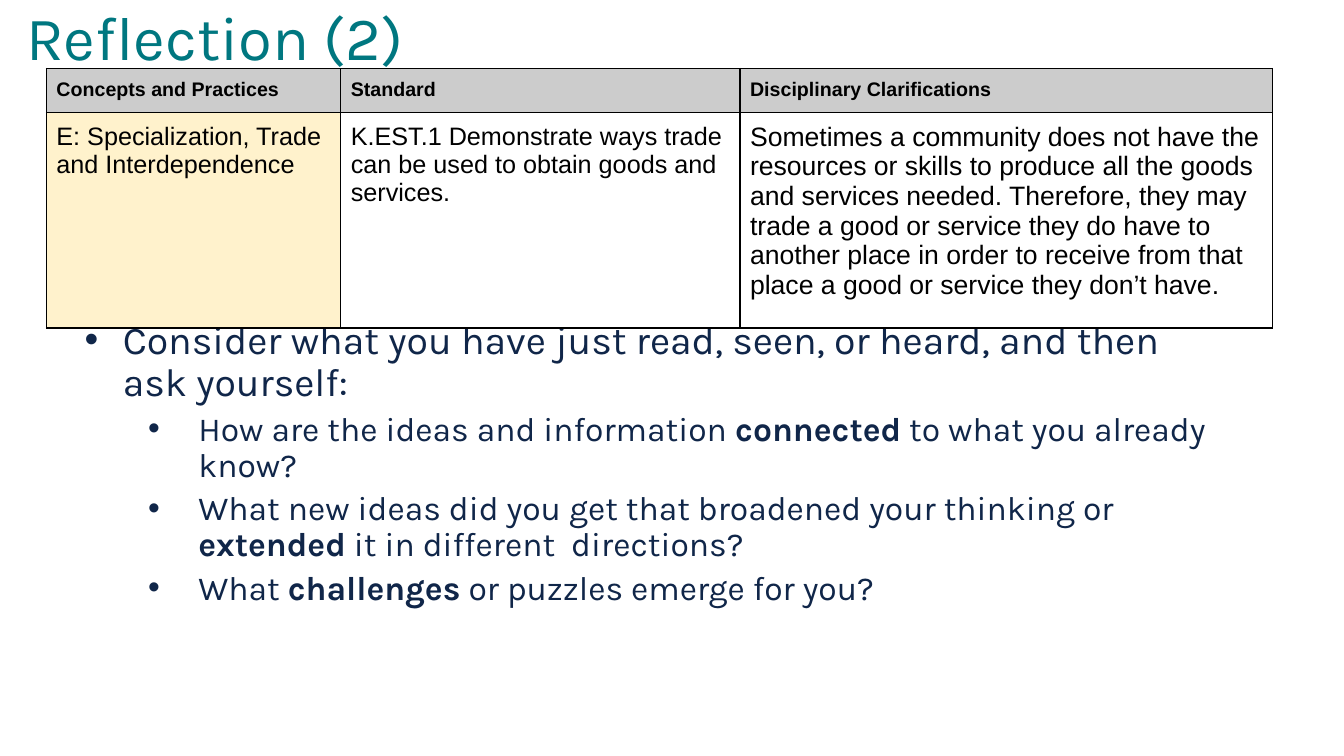
"""Build the Reflection slide: a title, a standards table and a list of prompts."""
from dataclasses import dataclass
from typing import Any

from lxml.etree import SubElement
from pptx import Presentation
from pptx.dml.color import RGBColor
from pptx.enum.text import MSO_ANCHOR
from pptx.oxml.ns import qn
from pptx.slide import Slide
from pptx.util import Inches, Pt

UNIT = 0.1
COLS, ROWS = 133.3, 75


@dataclass(frozen=True)
class Theme:
    teal: str = "007780"
    navy: str = "102649"
    black: str = "000000"
    grey: str = "CCCCCC"
    cream: str = "FFF2CC"
    white: str = "FFFFFF"
    sans: str = "Karla"
    plain: str = "Arial"
    title: float = 44
    lead: float = 28
    point: float = 24
    head: float = 14
    body: float = 18
    note: float = 19
    rule: float = 1


@dataclass(frozen=True)
class Area:
    col: float
    row: float
    wide: float
    high: float


@dataclass(frozen=True)
class Style:
    face: str
    size: float
    tint: str


@dataclass(frozen=True)
class Para:
    texts: tuple[str, ...]
    style: Style
    level: int = 0
    left: float = 0
    hang: float = 0
    above: float = 0


@dataclass(frozen=True)
class Entry:
    text: str
    size: float
    fill: str
    bold: bool = False


THEME = Theme()
LEAD = Style(THEME.sans, THEME.lead, THEME.navy)
POINT = Style(THEME.sans, THEME.point, THEME.navy)
TITLE = Para(("Reflection (2)",), Style(THEME.sans, THEME.title, THEME.teal))
POINTS = (
    ("How are the ideas and information ", "connected", " to what you already know?"),
    ("What new ideas did you get that broadened your thinking or ", "extended",
     " it in different  directions?"),
    ("What ", "challenges", " or puzzles emerge for you?"),
)
PROMPTS = (
    Para(("Consider what you have just read, seen, or heard, and then ask yourself:",),
         LEAD, left=5, hang=3.8),
    *(Para(texts, POINT, 1, 12.5, 5, 5) for texts in POINTS),
)
HEADS = ("Concepts and Practices", "Standard", "Disciplinary Clarifications")
GRID = (
    tuple(Entry(text, THEME.head, THEME.grey, True) for text in HEADS),
    (
        Entry("E: Specialization, Trade and Interdependence", THEME.body, THEME.cream),
        Entry("K.EST.1 Demonstrate ways trade can be used to obtain goods and services.",
              THEME.body, THEME.white),
        Entry("Sometimes a community does not have the resources or skills to produce "
              "all the goods and services needed. Therefore, they may trade a good or "
              "service they do have to another place in order to receive from that "
              "place a good or service they don’t have.", THEME.note, THEME.white),
    ),
)
WIDTHS = (29.2, 39.6, 52.8)
HEIGHTS = (4.2, 21.4)


def span(count: float) -> int:
    """Turn a count of grid units into a length."""
    return Inches(count * UNIT)


def place(area: Area) -> tuple[int, int, int, int]:
    """Turn a grid area into left, top, width and height."""
    return span(area.col), span(area.row), span(area.wide), span(area.high)


def apply(target: Any, form: dict[str, Any]) -> None:
    """Set each format value on the target."""
    for name, value in form.items():
        setattr(target, name, value)


def write(line: Any, text: str, style: Style, bold: bool) -> None:
    """Add one styled run to a paragraph."""
    run = line.add_run()
    run.text = text
    apply(run.font, {"name": style.face, "size": Pt(style.size), "bold": bold})
    run.font.color.rgb = RGBColor.from_string(style.tint)


def bullet(line: Any, para: Para) -> None:
    """Give a paragraph a hanging bullet."""
    props = line._p.get_or_add_pPr()
    props.set("marL", str(span(para.left)))
    props.set("indent", str(-span(para.hang)))
    tint = SubElement(props, qn("a:buClr"))
    SubElement(tint, qn("a:srgbClr"), val=para.style.tint)
    SubElement(props, qn("a:buFont"), typeface=THEME.plain)
    SubElement(props, qn("a:buChar"), char="•")


def draw_text(slide: Slide, area: Area, paras: tuple[Para, ...], anchor: MSO_ANCHOR) -> None:
    """Draw a text box in which every second run is bold."""
    frame = slide.shapes.add_textbox(*place(area)).text_frame
    apply(frame, {"word_wrap": True, "vertical_anchor": anchor})
    for index, para in enumerate(paras):
        line = frame.add_paragraph() if index else frame.paragraphs[0]
        if para.hang:
            bullet(line, para)
        apply(line, {"level": para.level, "line_spacing": 0.9,
                     "space_before": Pt(para.above)})
        for order, text in enumerate(para.texts):
            write(line, text, para.style, order % 2 == 1)


def border(cell: Any) -> None:
    """Rule all four sides of a cell."""
    props = cell._tc.get_or_add_tcPr()
    for side in ("lnL", "lnR", "lnT", "lnB"):
        edge = SubElement(props, qn(f"a:{side}"), w=str(Pt(THEME.rule)))
        fill = SubElement(edge, qn("a:solidFill"))
        SubElement(fill, qn("a:srgbClr"), val=THEME.black)


def draw_table(slide: Slide, area: Area) -> None:
    """Draw the table of standards."""
    table = slide.shapes.add_table(len(HEIGHTS), len(WIDTHS), *place(area)).table
    for column, width in zip(table.columns, WIDTHS):
        column.width = span(width)
    for row, height, items in zip(table.rows, HEIGHTS, GRID):
        row.height = span(height)
        for cell, item in zip(row.cells, items):
            edges = ("left", "right", "top", "bottom")
            apply(cell, {f"margin_{edge}": span(1) for edge in edges})
            border(cell)
            cell.fill.solid()
            cell.fill.fore_color.rgb = RGBColor.from_string(item.fill)
            style = Style(THEME.plain, item.size, THEME.black)
            write(cell.text_frame.paragraphs[0], item.text, style, item.bold)


def main() -> None:
    """Build and save the slide."""
    deck = Presentation()
    apply(deck, {"slide_width": span(COLS), "slide_height": span(ROWS)})
    slide = deck.slides.add_slide(deck.slide_layouts[6])
    draw_text(slide, Area(1.6, -3.2, 115, 14.5), (TITLE,), MSO_ANCHOR.MIDDLE)
    draw_text(slide, Area(6.2, 31.3, 115, 47.6), PROMPTS, MSO_ANCHOR.TOP)
    draw_table(slide, Area(4.6, 6.8, sum(WIDTHS), sum(HEIGHTS)))
    deck.save("out.pptx")


if __name__ == "__main__":
    main()
